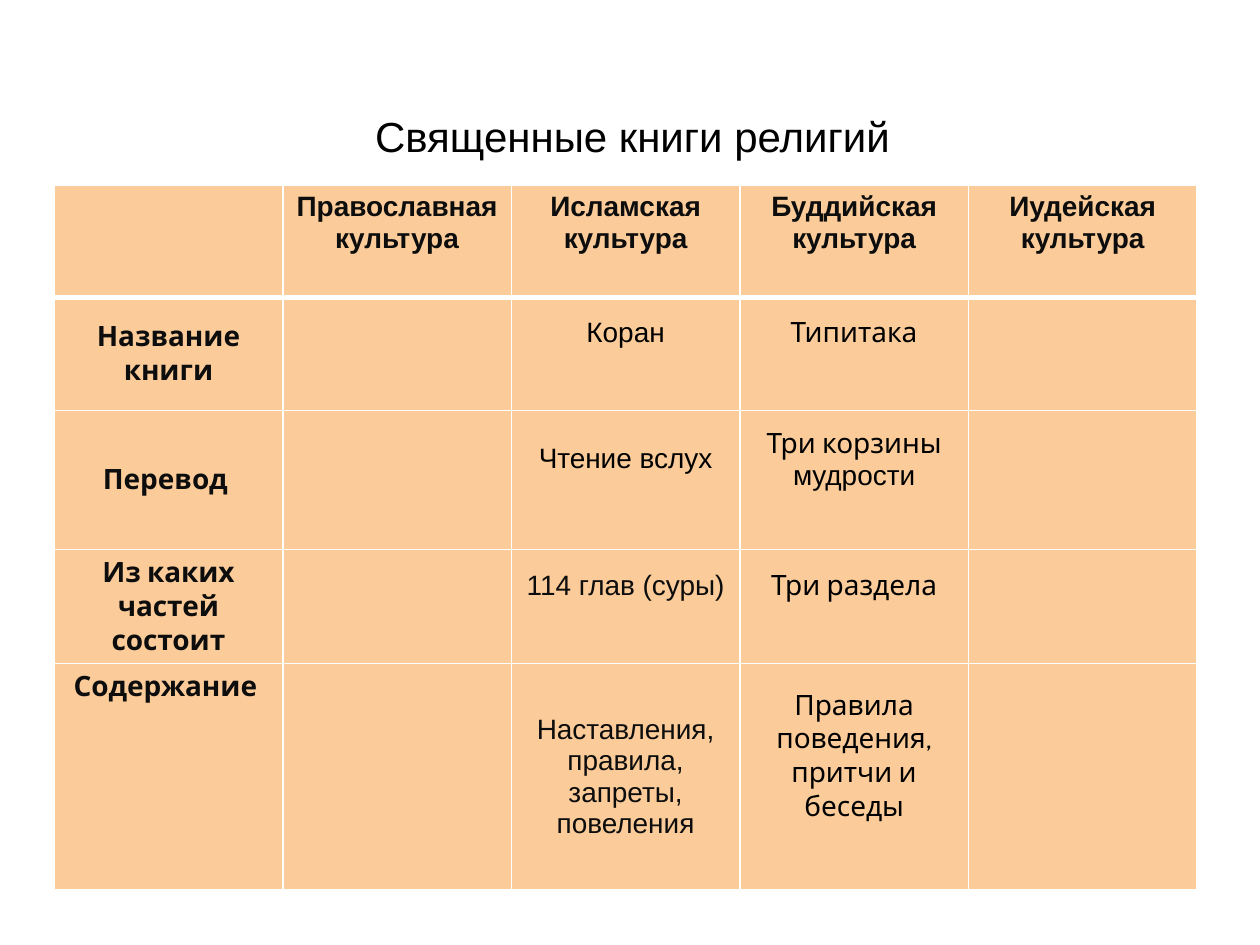
from pptx import Presentation
from pptx.util import Pt
from pptx.dml.color import RGBColor as Rgb
from pptx.enum.text import MSO_ANCHOR as Anchor, PP_ALIGN as Align
from pptx.oxml import parse_xml
from pptx.oxml.ns import nsdecls

HUES = {"peach": "FBCC9A", "white": "FFFFFF", "ink": "0D0D0D", "black": "000000"}
SANS, CABIN = "Arial", "Cabin"
LIFT = 24
ROWS = [64, 64.5, 79.5, 65, 129.5]
COL = 130.6

HEADS = ["Православная культура", "Исламская культура",
         "Буддийская культура", "Иудейская культура"]
SIDES = ["Название книги", "Перевод ", "Из каких частей состоит", "Содержание "]
ISLAM = [
    (["Коран"], "black", LIFT),
    (["Чтение вслух"], "black", LIFT),
    (["114 глав (суры)"], "ink", LIFT),
    (["Наставления,", "правила,", "запреты,", "повеления"], "ink", 0),
]
BUDDHA = [
    [("Типитака", CABIN)],
    [("Три корзины", CABIN), (" мудрости", SANS)],
    [("Три раздела", CABIN)],
    [("Правила поведения, притчи и беседы", CABIN)],
]


class Deck:
    def __init__(self, wide, high):
        self.prs = Presentation()
        self.prs.slide_width, self.prs.slide_height = Pt(wide), Pt(high)
        self.slide = self.prs.slides.add_slide(self.prs.slide_layouts[5])

    def style(self, font, face, size, hue, bold):
        font.size, font.bold = Pt(size), bold
        font.color.rgb = Rgb.from_string(HUES[hue])
        if face:
            font.name = face

    def title(self, text, x, y, w, h):
        box = self.slide.shapes.title
        box.left, box.top, box.width, box.height = Pt(x), Pt(y), Pt(w), Pt(h)
        frame = box.text_frame
        frame.text = text
        frame.word_wrap = True
        frame.vertical_anchor = Anchor.TOP
        para = frame.paragraphs[0]
        para.alignment = Align.CENTER
        self.style(para.font, SANS, 24, "black", False)

    def table(self, x, y, rows, cols):
        grid = self.slide.shapes.add_table(
            len(rows), len(cols), Pt(x), Pt(y), Pt(sum(cols)), Pt(sum(rows))).table
        for row, high in zip(grid.rows, rows):
            row.height = Pt(high)
        for col, wide in zip(grid.columns, cols):
            col.width = Pt(wide)
        for r in range(len(rows)):
            for c in range(len(cols)):
                cell = grid.cell(r, c)
                self.edge(cell, top=3 if r == 1 else 1, base=3 if r == 0 else 1)
                cell.fill.solid()
                cell.fill.fore_color.rgb = Rgb.from_string(HUES["peach"])
        return grid

    def edge(self, cell, top, base):
        props = cell._tc.get_or_add_tcPr()
        for side, wide in zip("LRTB", (1, 1, top, base)):
            props.append(parse_xml(
                f'<a:ln{side} {nsdecls("a")} w="{Pt(wide)}"><a:solidFill>'
                f'<a:srgbClr val="{HUES["white"]}"/></a:solidFill></a:ln{side}>'))

    def cell(self, cell, lines, hue, bold=False, mid=True, lift=0):
        cell.vertical_anchor = Anchor.MIDDLE if mid else Anchor.TOP
        cell.margin_bottom = Pt(3.6 + lift)
        frame = cell.text_frame
        for n, runs in enumerate(lines):
            para = frame.add_paragraph() if n else frame.paragraphs[0]
            para.alignment = Align.CENTER
            faces = {face for _, face in runs}
            same = len(faces) == 1
            self.style(para.font, runs[0][1] if same else None, 16, hue, bold)
            for text, face in runs:
                run = para.add_run()
                run.text = text
                if not same:
                    run.font.name = face

    def save(self):
        self.prs.save("out.pptx")


def main():
    deck = Deck(720, 540)
    deck.title("Священные книги религий", 39.6, 59.8, 643.7, 311.8)
    grid = deck.table(31, 106, ROWS, [COL] * 5)
    for c, text in enumerate(HEADS, 1):
        deck.cell(grid.cell(0, c), [[(text, SANS)]], "ink", bold=True, mid=False)
    for r, text in enumerate(SIDES, 1):
        deck.cell(grid.cell(r, 0), [[(text, CABIN)]], "ink", bold=True,
                  mid=r < len(SIDES))
    for r, (lines, hue, lift) in enumerate(ISLAM, 1):
        deck.cell(grid.cell(r, 2), [[(text, SANS)] for text in lines], hue, lift=lift)
    for r, runs in enumerate(BUDDHA, 1):
        deck.cell(grid.cell(r, 3), [runs], "black", lift=LIFT)
    deck.save()


if __name__ == "__main__":
    main()
